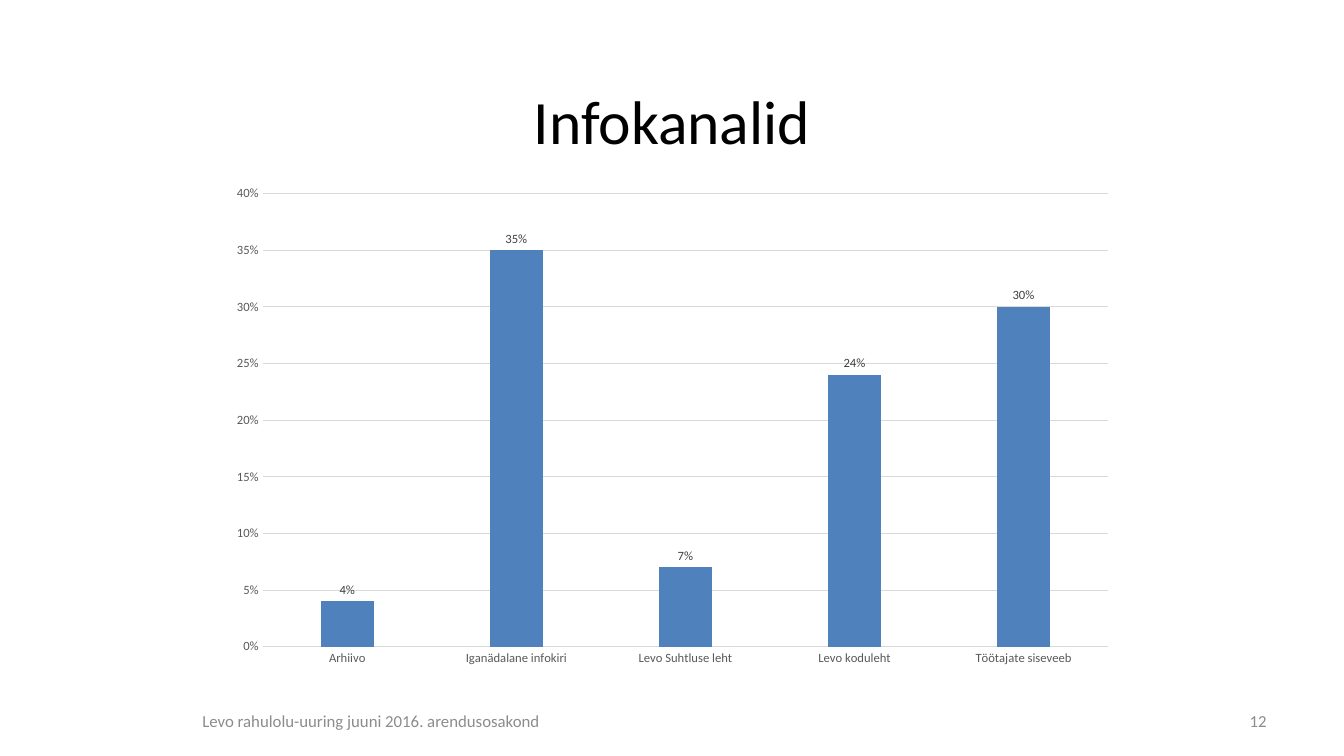
"""Build the slide on information channels with its column chart."""
from dataclasses import dataclass

from pptx import Presentation
from pptx.chart.data import CategoryChartData
from pptx.dml.color import RGBColor
from pptx.enum.chart import XL_CHART_TYPE, XL_LABEL_POSITION, XL_TICK_MARK
from pptx.enum.text import MSO_ANCHOR, PP_ALIGN
from pptx.util import Inches, Pt

TITLE = "Infokanalid"
FOOTER = "Levo rahulolu-uuring juuni 2016. arendusosakond"
PAGE = "12"
CHANNELS = {
    "Arhiivo": 0.04,
    "Iganädalane infokiri": 0.35,
    "Levo Suhtluse leht": 0.07,
    "Levo koduleht": 0.24,
    "Töötajate siseveeb": 0.3,
}


@dataclass(frozen=True)
class Theme:
    """Colours, font and type sizes."""
    font: str = "Calibri"
    ink: str = "000000"
    muted: str = "8C8C8C"
    axis: str = "595959"
    label: str = "404040"
    grid: str = "D9D9D9"
    bar: str = "4F81BD"
    title_size: int = 44
    footer_size: int = 12
    chart_size: int = 10
    axis_size: int = 9


THEME = Theme()
SLIDE_WIDTH, SLIDE_HEIGHT, MARGIN = 13.33, 7.5, 0.67
FOOTER_TOP, FOOTER_HEIGHT, PAGE_WIDTH = 6.95, 0.4, 3.11


def set_font(font, size, color):
    """Apply the theme font with a size and colour."""
    font.name = THEME.font
    font.size = Pt(size)
    font.color.rgb = RGBColor.from_string(color)


def set_line(line, color):
    """Give a line its colour and the shared thin width."""
    line.color.rgb = RGBColor.from_string(color)
    line.width = Pt(0.75)


def add_text(slide, text, box, *, size, color, align):
    """Place one line of vertically centred text."""
    frame = slide.shapes.add_textbox(*map(Inches, box)).text_frame
    frame.word_wrap = True
    frame.vertical_anchor = MSO_ANCHOR.MIDDLE
    paragraph = frame.paragraphs[0]
    paragraph.alignment = align
    run = paragraph.add_run()
    run.text = text
    set_font(run.font, size, color)


def add_channel_chart(slide, box):
    """Draw the share of each channel as columns."""
    shares = CategoryChartData(number_format="0%")
    shares.categories = list(CHANNELS)
    shares.add_series("Series 1", list(CHANNELS.values()))
    chart = slide.shapes.add_chart(
        XL_CHART_TYPE.COLUMN_CLUSTERED, *map(Inches, box), shares).chart
    chart.has_legend = False
    chart.has_title = False
    set_font(chart.font, THEME.chart_size, THEME.ink)

    channel_axis, share_axis = chart.category_axis, chart.value_axis
    for axis in (channel_axis, share_axis):
        axis.major_tick_mark = axis.minor_tick_mark = XL_TICK_MARK.NONE
        set_font(axis.tick_labels.font, THEME.axis_size, THEME.axis)
    set_line(channel_axis.format.line, THEME.grid)
    share_axis.format.line.fill.background()
    share_axis.minimum_scale, share_axis.maximum_scale = 0, 0.4
    share_axis.major_unit = 0.05
    share_axis.has_major_gridlines = True
    set_line(share_axis.major_gridlines.format.line, THEME.grid)
    share_axis.tick_labels.number_format = "0%"
    share_axis.tick_labels.number_format_is_linked = False

    plot = chart.plots[0]
    plot.gap_width, plot.overlap = 219, -27
    plot.vary_by_categories = False
    bars = plot.series[0]
    bars.invert_if_negative = False
    bars.format.fill.solid()
    bars.format.fill.fore_color.rgb = RGBColor.from_string(THEME.bar)
    labels = bars.data_labels
    labels.show_value = True
    labels.position = XL_LABEL_POSITION.OUTSIDE_END
    labels.number_format = "0%"
    labels.number_format_is_linked = False
    set_font(labels.font, THEME.axis_size, THEME.label)


def main():
    """Assemble and save the slide."""
    deck = Presentation()
    deck.slide_width, deck.slide_height = Inches(SLIDE_WIDTH), Inches(SLIDE_HEIGHT)
    slide = deck.slides.add_slide(deck.slide_layouts[6])
    add_text(slide, TITLE, (MARGIN, 0.62, SLIDE_WIDTH - 2 * MARGIN, 1.13),
             size=THEME.title_size, color=THEME.ink, align=PP_ALIGN.CENTER)
    add_channel_chart(slide, (2.17, 1.75, 9, 4.95))
    page_left = SLIDE_WIDTH - MARGIN - PAGE_WIDTH
    for text, left, width, align in (
        (FOOTER, MARGIN, 6.02, PP_ALIGN.CENTER),
        (PAGE, page_left, PAGE_WIDTH, PP_ALIGN.RIGHT),
    ):
        add_text(slide, text, (left, FOOTER_TOP, width, FOOTER_HEIGHT),
                 size=THEME.footer_size, color=THEME.muted, align=align)
    deck.save("out.pptx")


if __name__ == "__main__":
    main()
